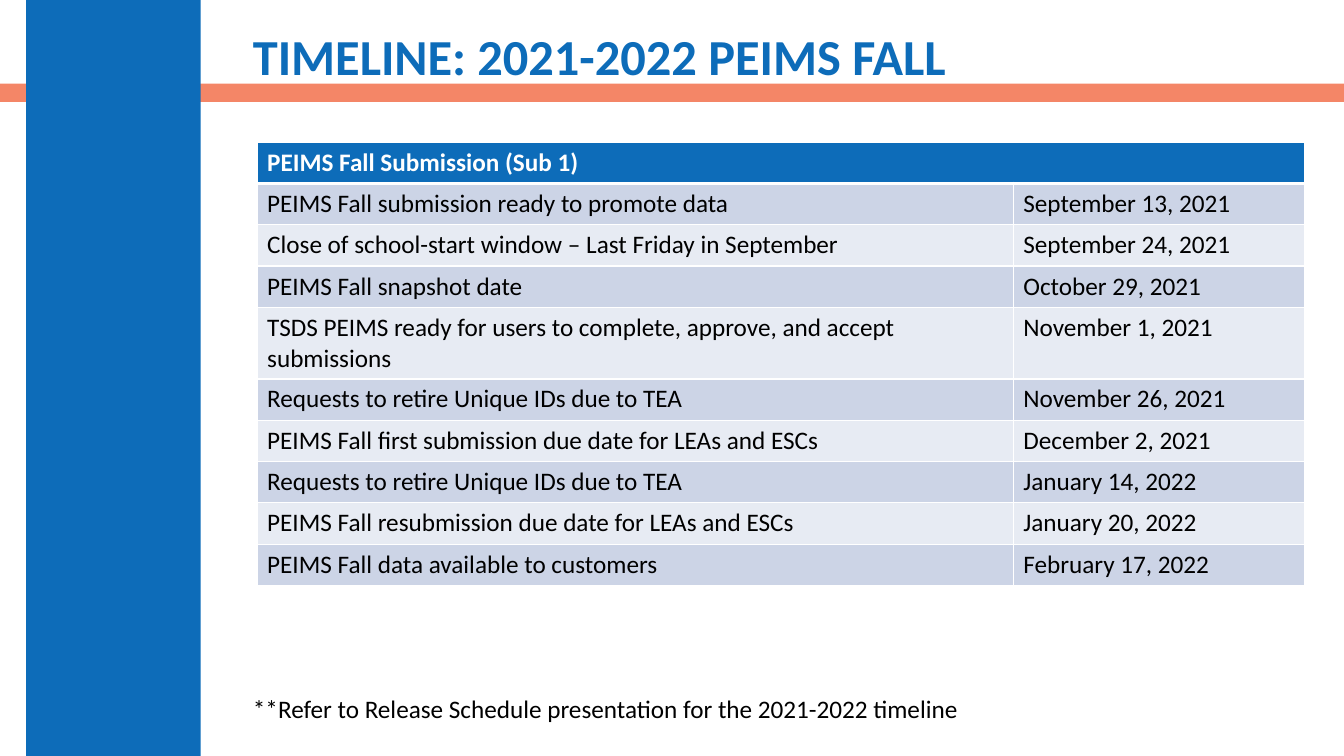
import dataclasses

import lxml.etree
import pptx
import pptx.dml.color
import pptx.enum.shapes
import pptx.enum.text
import pptx.oxml.ns
import pptx.util

Inches = pptx.util.Inches
qn = pptx.oxml.ns.qn


@dataclasses.dataclass(frozen=True)
class Theme:
    font: str = "Calibri"
    title_size: int = 36
    body_size: int = 18
    blue: str = "0D6CB9"
    coral: str = "F16038"
    dark_row: str = "CCD4E6"
    light_row: str = "E7EBF3"
    black: str = "000000"
    white: str = "FFFFFF"


class SlideBuilder:
    """Draws styled elements on the current slide."""

    def __init__(self, page, theme):
        self.page = page
        self.theme = theme

    def color(self, value):
        return pptx.dml.color.RGBColor.from_string(value)

    def style(self, para, size, color, bold=False):
        for span in para.runs:
            span.font.name = self.theme.font
            span.font.size = pptx.util.Pt(size)
            span.font.bold = bold
            span.font.color.rgb = self.color(color)

    def bar(self, left, top, width, height, color, opacity=100):
        shape = self.page.shapes.add_shape(
            pptx.enum.shapes.MSO_SHAPE.RECTANGLE,
            Inches(left), Inches(top), Inches(width), Inches(height))
        shape.shadow.inherit = False
        shape.fill.solid()
        shape.fill.fore_color.rgb = self.color(color)
        shape.line.fill.background()
        if opacity < 100:
            tint = shape.fill._xPr.find(".//" + qn("a:srgbClr"))
            lxml.etree.SubElement(tint, qn("a:alpha"), val=str(opacity * 1000))

    def text(self, left, top, width, height, words, size, color, bold=False,
             anchor=pptx.enum.text.MSO_ANCHOR.TOP, line_spacing=None):
        box = self.page.shapes.add_textbox(
            Inches(left), Inches(top), Inches(width), Inches(height))
        frame = box.text_frame
        frame.word_wrap = True
        frame.vertical_anchor = anchor
        frame.text = words
        para = frame.paragraphs[0]
        para.line_spacing = line_spacing
        self.style(para, size, color, bold)

    def borders(self, cell, top, bottom):
        properties = cell._tc.get_or_add_tcPr()
        for side, points in (("L", 1), ("R", 1), ("T", top), ("B", bottom)):
            line = lxml.etree.SubElement(
                properties, qn(f"a:ln{side}"), w=str(pptx.util.Pt(points)))
            fill = lxml.etree.SubElement(line, qn("a:solidFill"))
            lxml.etree.SubElement(fill, qn("a:srgbClr"), val=self.theme.white)

    def table(self, left, top, widths, heights, heading, entries):
        rows = [(heading, "")] + entries
        grid = self.page.shapes.add_table(
            len(rows), len(widths), Inches(left), Inches(top),
            Inches(sum(widths)), Inches(sum(heights))).table
        for column, width in zip(grid.columns, widths):
            column.width = Inches(width)
        for row, height in zip(grid.rows, heights):
            row.height = Inches(height)
        for index, row in enumerate(rows):
            header = index == 0
            fill = self.theme.dark_row if index % 2 else self.theme.light_row
            for position, words in enumerate(row):
                cell = grid.cell(index, position)
                self.borders(cell, 3 if index == 1 else 1, 3 if header else 1)
                cell.fill.solid()
                cell.fill.fore_color.rgb = self.color(
                    self.theme.blue if header else fill)
                cell.text_frame.text = words
                self.style(cell.text_frame.paragraphs[0], self.theme.body_size,
                           self.theme.white if header else self.theme.black,
                           header)
        grid.cell(0, 0).merge(grid.cell(0, len(widths) - 1))


def main():
    deck = pptx.Presentation()
    deck.slide_width = Inches(13.33)
    deck.slide_height = Inches(7.5)
    theme = Theme()
    builder = SlideBuilder(deck.slides.add_slide(deck.slide_layouts[6]), theme)

    builder.bar(0, 0.83, 13.33, 0.18, theme.coral, opacity=76)
    builder.bar(0.26, 0, 1.73, 7.5, theme.blue)
    builder.text(2.41, 0.18, 10.53, 0.82, "TIMELINE: 2021-2022 PEIMS FALL",
                 theme.title_size, theme.blue, bold=True,
                 anchor=pptx.enum.text.MSO_ANCHOR.MIDDLE, line_spacing=0.9)
    builder.text(
        2.41, 6.83, 10.25, 0.4,
        "**Refer to Release Schedule presentation for the 2021-2022 timeline",
        theme.body_size, theme.black)

    milestones = [
        ("PEIMS Fall submission ready to promote data", "September 13, 2021"),
        ("Close of school-start window – Last Friday in September",
         "September 24, 2021"),
        ("PEIMS Fall snapshot date", "October 29, 2021"),
        ("TSDS PEIMS ready for users to complete, approve, and accept "
         "submissions", "November 1, 2021"),
        ("Requests to retire Unique IDs due to TEA", "November 26, 2021"),
        ("PEIMS Fall first submission due date for LEAs and ESCs",
         "December 2, 2021"),
        ("Requests to retire Unique IDs due to TEA", "January 14, 2022"),
        ("PEIMS Fall resubmission due date for LEAs and ESCs",
         "January 20, 2022"),
        ("PEIMS Fall data available to customers", "February 17, 2022"),
    ]
    heights = [0.41] * 4 + [0.71] + [0.41] * 5
    builder.table(2.55, 1.41, [7.5, 2.89], heights,
                  "PEIMS Fall Submission (Sub 1)", milestones)
    deck.save("out.pptx")


if __name__ == "__main__":
    main()
